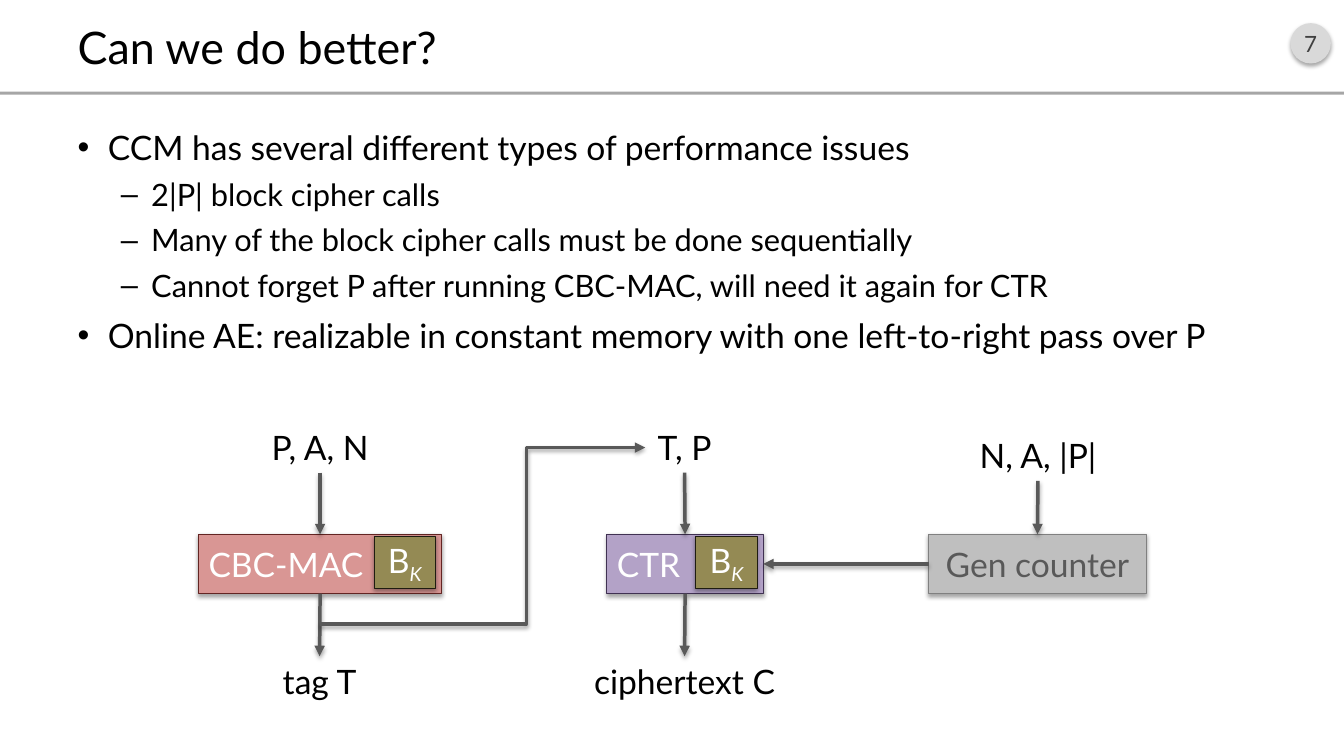
from dataclasses import dataclass

from lxml import etree
from pptx import Presentation
from pptx.dml.color import RGBColor
from pptx.enum.shapes import MSO_CONNECTOR, MSO_SHAPE
from pptx.enum.text import MSO_ANCHOR, MSO_AUTO_SIZE, PP_ALIGN
from pptx.oxml import parse_xml
from pptx.oxml.ns import nsdecls, qn
from pptx.util import Inches, Pt

STRAIGHT, ELBOW = MSO_CONNECTOR.STRAIGHT, MSO_CONNECTOR.ELBOW
RECTANGLE, OVAL = MSO_SHAPE.RECTANGLE, MSO_SHAPE.OVAL
LEFT, CENTER = PP_ALIGN.LEFT, PP_ALIGN.CENTER
MIDDLE = MSO_ANCHOR.MIDDLE
TOP_SIDE, LEFT_SIDE, BOTTOM_SIDE, RIGHT_SIDE = range(4)


@dataclass(frozen=True)
class Theme:
    font: str = "Lato"
    title_size: int = 32
    size: int = 24
    sub_size: int = 22
    number_size: int = 16
    black: str = "000000"
    white: str = "FFFFFF"
    arrow: str = "595959"
    rule: str = "A6A6A6"
    badge: str = "D9D9D9"
    badge_text: str = "404040"
    mac: tuple = ("D99694", "632523")
    ctr: tuple = ("B3A2C7", "403152")
    cipher: tuple = ("948A54", "1E1C11")
    counter: tuple = ("BFBFBF", "808080")


theme = Theme()


def style_text(paragraph, size, color, align=LEFT):
    paragraph.alignment = align
    for run in paragraph.runs:
        run.font.name = theme.font
        run.font.size = Pt(size)
        run.font.color.rgb = RGBColor.from_string(color)


def finish_outline(shape, color, width, arrowhead=False):
    """Set the line, an optional arrowhead and the soft shadow below the shape."""
    if width:
        shape.line.color.rgb = RGBColor.from_string(color)
        shape.line.width = Pt(width)
    else:
        shape.line.fill.background()
    properties = shape._element.spPr
    if arrowhead:
        etree.SubElement(properties.find(qn("a:ln")), qn("a:tailEnd"), type="triangle")
    properties.append(parse_xml(
        f'<a:effectLst {nsdecls("a")}><a:outerShdw blurRad="39400" dist="22900" dir="5400000" '
        'rotWithShape="0"><a:srgbClr val="000000"><a:alpha val="35000"/></a:srgbClr>'
        '</a:outerShdw></a:effectLst>'))


prs = Presentation()
prs.slide_width, prs.slide_height = Inches(13.33), Inches(7.5)
slide = prs.slides.add_slide(prs.slide_layouts[1])
shapes = slide.shapes

# Header
title = shapes.title
title.left, title.top, title.width, title.height = map(Inches, (0.67, 0.16, 12, 0.6))
title.text_frame.text = "Can we do better?"
title.text_frame.vertical_anchor = MIDDLE
title.text_frame.auto_size = MSO_AUTO_SIZE.NONE
style_text(title.text_frame.paragraphs[0], theme.title_size, theme.black)

header_rule = shapes.add_shape(RECTANGLE, 0, Inches(0.91), prs.slide_width, Inches(0.03))
header_rule.shadow.inherit = False
header_rule.fill.solid()
header_rule.fill.fore_color.rgb = RGBColor.from_string(theme.rule)
header_rule.line.fill.background()

page_number = shapes.add_shape(OVAL, *map(Inches, (12.8, 0.23, 0.4, 0.4)))
page_number.fill.solid()
page_number.fill.fore_color.rgb = RGBColor.from_string(theme.badge)
finish_outline(page_number, None, 0)
page_number.text_frame.text = "7"
page_number.text_frame.margin_left = page_number.text_frame.margin_right = 0
page_number.text_frame.vertical_anchor = MIDDLE
style_text(page_number.text_frame.paragraphs[0], theme.number_size, theme.badge_text, CENTER)

# Performance issues
issues = [
    (0, "CCM has several different types of performance issues"),
    (1, "2|P| block cipher calls"),
    (1, "Many of the block cipher calls must be done sequentially"),
    (1, "Cannot forget P after running CBC-MAC, will need it again for CTR"),
    (0, "Online AE: realizable in constant memory with one left-to-right pass over P"),
]
body = slide.placeholders[1]
body.left, body.top, body.width, body.height = map(Inches, (0.67, 1.21, 12, 5.75))
body.text_frame.text = "\n".join(wording for _, wording in issues)
body.text_frame.auto_size = MSO_AUTO_SIZE.NONE
for paragraph, (level, _) in zip(body.text_frame.paragraphs, issues):
    paragraph.level = level
    paragraph.space_before = Pt((8, 6)[level])
    style_text(paragraph, (theme.size, theme.sub_size)[level], theme.black)
    indents = paragraph._p.get_or_add_pPr()
    indents.set("marL", str(Inches((0.3, 0.73)[level])))
    indents.set("indent", str(Inches(-0.3)))

# Boxes: wording, left, top, width, height, (fill, line), text colour, alignment
box_top, box_height = 5.3, 0.59
boxes = {}
for wording, left, top, width, height, colors, text_color, align in [
    ("CBC-MAC", 1.97, box_top, 2.41, box_height, theme.mac, theme.white, LEFT),
    ("B", 3.71, 5.32, 0.61, 0.52, theme.cipher, theme.white, CENTER),
    ("CTR", 6.02, box_top, 1.55, box_height, theme.ctr, theme.white, LEFT),
    ("B", 6.9, 5.32, 0.61, 0.52, theme.cipher, theme.white, CENTER),
    ("Gen counter", 9.21, box_top, 2.16, box_height, theme.counter, theme.arrow, CENTER),
]:
    box = shapes.add_shape(RECTANGLE, *map(Inches, (left, top, width, height)))
    box.fill.solid()
    box.fill.fore_color.rgb = RGBColor.from_string(colors[0])
    finish_outline(box, colors[1], 0.75)
    box.text_frame.text = wording
    box.text_frame.vertical_anchor = MIDDLE
    label = box.text_frame.paragraphs[0]
    if wording == "B":
        key = label.add_run()
        key.text = "K"
        key.font.italic = True
        key.font._element.set("baseline", "-25000")
    style_text(label, theme.size, text_color, align)
    boxes[wording] = box

# Inputs and outputs
values = {}
for wording, left, top, width in [
    ("P, A, N", 2.56, 4.19, 1.23),
    ("tag T", 2.69, 6.51, 0.96),
    ("T, P", 6.4, 4.19, 0.78),
    ("ciphertext C", 5.76, 6.51, 2.06),
    ("N, A, |P|", 9.59, 4.27, 1.41),
]:
    value = shapes.add_textbox(*map(Inches, (left, top, width, 0.5)))
    value.text_frame.word_wrap = False
    value.text_frame.text = wording
    style_text(value.text_frame.paragraphs[0], theme.size, theme.black, CENTER)
    values[wording] = value

# Data flow
for source, source_side, target, target_side in [
    (values["P, A, N"], BOTTOM_SIDE, boxes["CBC-MAC"], TOP_SIDE),
    (boxes["CBC-MAC"], BOTTOM_SIDE, values["tag T"], TOP_SIDE),
    (values["T, P"], BOTTOM_SIDE, boxes["CTR"], TOP_SIDE),
    (boxes["CTR"], BOTTOM_SIDE, values["ciphertext C"], TOP_SIDE),
    (values["N, A, |P|"], BOTTOM_SIDE, boxes["Gen counter"], TOP_SIDE),
    (boxes["Gen counter"], LEFT_SIDE, boxes["CTR"], RIGHT_SIDE),
]:
    flow = shapes.add_connector(STRAIGHT, 0, 0, 0, 0)
    flow.begin_connect(source, source_side)
    flow.end_connect(target, target_side)
    finish_outline(flow, theme.arrow, 2.5, arrowhead=True)

tag_to_ctr = shapes.add_connector(ELBOW, *map(Inches, (3.17, 6.19, 6.4, 4.45)))
tag_to_ctr.end_connect(values["T, P"], LEFT_SIDE)
bend = tag_to_ctr._element.spPr.find(qn("a:prstGeom")).get_or_add_avLst()
etree.SubElement(bend, qn("a:gd"), name="adj1", fmla="val 63500")
finish_outline(tag_to_ctr, theme.arrow, 2.5, arrowhead=True)

prs.save("out.pptx")
